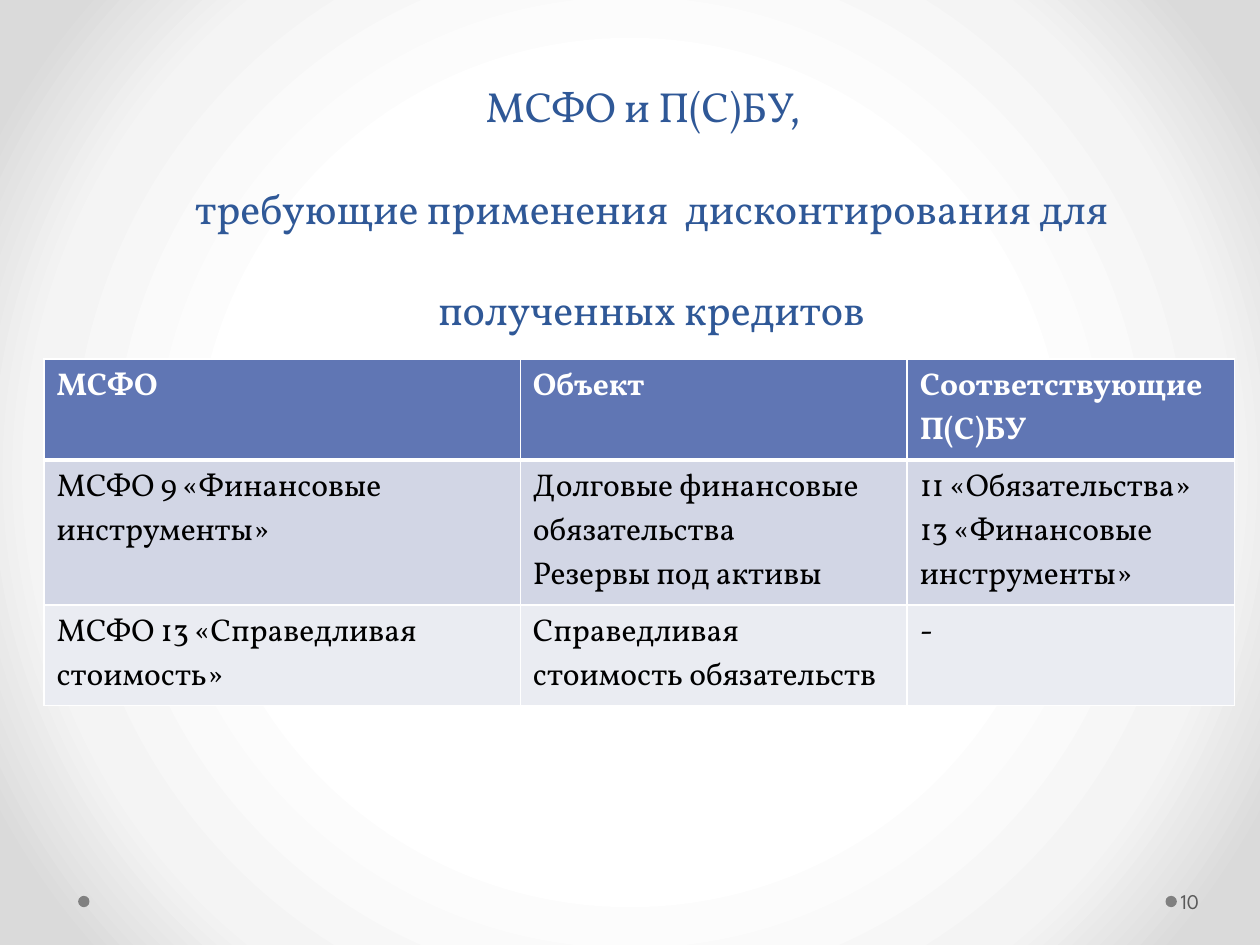
from dataclasses import dataclass

from lxml import etree
from pptx import Presentation, util as u
from pptx.dml.color import RGBColor
from pptx.enum import shapes, text
from pptx.oxml import parse_xml
from pptx.oxml.ns import nsdecls, qn


@dataclass(frozen=True)
class Theme:
    serif: str = "Vollkorn"
    sans: str = "League Spartan"
    title: str = "2F5897"
    page: str = "595959"
    dot: str = "808080"
    white: str = "FFFFFF"
    body: str = "000000"
    header_fill: str = "6076B4"
    band_fills: tuple = ("D2D6E5", "EAECF2")
    backdrop: tuple = ((50, "FFFFFF"), (76, "F4F4F4"), (92, "DADADA"))
    title_size: int = 24
    table_size: int = 18
    page_size: int = 12


THEME = Theme()
WIDTH, HEIGHT = u.Inches(10), u.Inches(7.5)

TITLE = ("МСФО и П(С)БУ,  ",
         "требующие применения  дисконтирования для полученных кредитов")
COLUMNS = (3.78, 3.07, 2.6)
ROW_HEIGHTS = (0.8, 1.15, 0.8)
ROWS = (
    ("МСФО", "Объект", "Соответствующие П(С)БУ"),
    ("МСФО 9 «Финансовые инструменты»",
     "Долговые финансовые обязательства\nРезервы под активы",
     "11 «Обязательства» 13 «Финансовые инструменты»"),
    ("МСФО 13 «Справедливая стоимость»",
     "Справедливая стоимость обязательств", "-"),
)


def add_run(paragraph, words, font, size, color, bold=False):
    run = paragraph.add_run()
    run.text = words
    run.font.name, run.font.size, run.font.bold = font, u.Pt(size), bold
    run.font.color.rgb = RGBColor.from_string(color)


def paint_backdrop(slide):
    """Radial gradient, white in the middle and grey at the corners."""
    fill = slide.background.fill
    fill.gradient()
    gradient = slide.background._cSld.find(".//" + qn("a:gradFill"))
    for child in list(gradient):
        gradient.remove(child)
    stops = "".join(
        f'<a:gs pos="{share * 1000}"><a:srgbClr val="{color}"/></a:gs>'
        for share, color in THEME.backdrop)
    gradient.append(parse_xml(f'<a:gsLst {nsdecls("a")}>{stops}</a:gsLst>'))
    gradient.append(parse_xml(
        f'<a:path {nsdecls("a")} path="circle"><a:fillToRect '
        'l="50000" t="50000" r="50000" b="50000"/></a:path>'))


def add_dot(slide, left):
    size = u.Inches(0.09)
    dot = slide.shapes.add_shape(shapes.MSO_SHAPE.OVAL, u.Inches(left),
                                 u.Inches(7.11), size, size)
    dot.shadow.inherit = False
    dot.fill.solid()
    dot.fill.fore_color.rgb = RGBColor.from_string(THEME.dot)
    dot.line.fill.background()


def add_text_box(slide, box, anchor):
    frame = slide.shapes.add_textbox(*map(u.Inches, box)).text_frame
    frame.word_wrap = True
    frame.vertical_anchor = anchor
    return frame


def add_title(slide):
    frame = add_text_box(slide, (0.67, 1.94, 9, 0.76), text.MSO_ANCHOR.BOTTOM)
    heading = frame.paragraphs[0]
    heading.alignment = text.PP_ALIGN.CENTER
    heading.line_spacing = u.Pt(58)
    for number, line in enumerate(TITLE):
        if number:
            heading.add_line_break()
        add_run(heading, line, THEME.serif, THEME.title_size, THEME.title)


def add_page_number(slide):
    frame = add_text_box(slide, (9.34, 6.95, 0.61, 0.4), text.MSO_ANCHOR.MIDDLE)
    frame.margin_left = u.Inches(0.03)
    frame.margin_right = u.Inches(0.05)
    add_run(frame.paragraphs[0], "10", THEME.sans, THEME.page_size, THEME.page)


def set_borders(cell, bottom, top):
    """Borders go ahead of the fill inside the cell properties."""
    properties = cell._tc.get_or_add_tcPr()
    widths = (("lnL", 1), ("lnR", 1), ("lnT", top), ("lnB", bottom))
    for position, (side, points) in enumerate(widths):
        border = etree.Element(qn(f"a:{side}"), w=str(u.Pt(points)))
        solid = etree.SubElement(border, qn("a:solidFill"))
        etree.SubElement(solid, qn("a:srgbClr"), val=THEME.white)
        properties.insert(position, border)


def fill_cell(cell, words, row):
    is_header = row == 0
    fill = THEME.header_fill if is_header else THEME.band_fills[(row - 1) % 2]
    cell.fill.solid()
    cell.fill.fore_color.rgb = RGBColor.from_string(fill)
    set_borders(cell, bottom=3 if is_header else 1, top=3 if row == 1 else 1)
    for number, line in enumerate(words.split("\n")):
        frame = cell.text_frame
        paragraph = frame.add_paragraph() if number else frame.paragraphs[0]
        add_run(paragraph, line, THEME.serif, THEME.table_size,
                THEME.white if is_header else THEME.body, is_header)


def add_standards_table(slide):
    standards = slide.shapes.add_table(
        len(ROWS), len(COLUMNS), u.Inches(0.35), u.Inches(2.85),
        u.Inches(sum(COLUMNS)), u.Inches(sum(ROW_HEIGHTS))).table
    for column, width in zip(standards.columns, COLUMNS):
        column.width = u.Inches(width)
    for row, (entries, height) in enumerate(zip(ROWS, ROW_HEIGHTS)):
        standards.rows[row].height = u.Inches(height)
        for column, words in enumerate(entries):
            fill_cell(standards.cell(row, column), words, row)


def main():
    deck = Presentation()
    deck.slide_width, deck.slide_height = WIDTH, HEIGHT
    slide = deck.slides.add_slide(deck.slide_layouts[6])

    # Backdrop and footer dots
    paint_backdrop(slide)
    for left in (9.25, 0.62):
        add_dot(slide, left)

    # Content
    add_title(slide)
    add_page_number(slide)
    add_standards_table(slide)
    deck.save("out.pptx")


if __name__ == "__main__":
    main()
